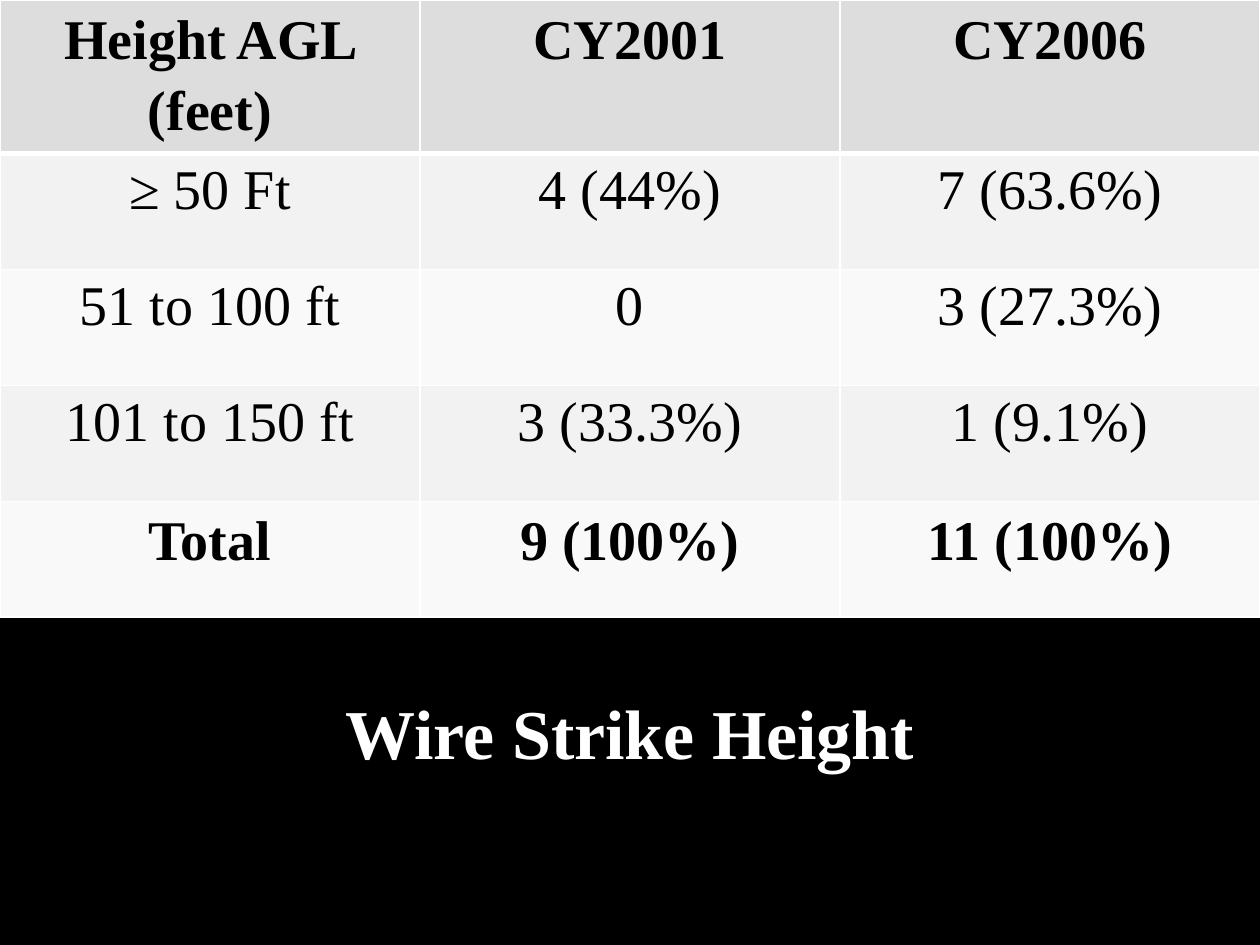
from dataclasses import dataclass

from pptx import Presentation
from pptx.dml.color import RGBColor
from pptx.enum.text import MSO_ANCHOR, PP_ALIGN as Align
from pptx.oxml import parse_xml
from pptx.oxml.ns import nsdecls
from pptx.util import Inches, Pt


@dataclass(frozen=True)
class Theme:
    font: str = "Times New Roman"
    background: str = "000000"
    title: str = "FFFFFF"
    text: str = "000000"
    border: str = "FFFFFF"
    header: str = "DDDDDD"
    bands: tuple = ("F9F9F9", "F2F2F2")
    title_size: int = 40
    table_size: int = 32


theme = Theme()


def write_text(frame, text, size, color, bold=False, line_spacing=1.0):
    frame.word_wrap = True
    paragraph = frame.paragraphs[0]
    paragraph.alignment = Align.CENTER
    paragraph.line_spacing = line_spacing
    run = paragraph.add_run()
    run.text = text
    run.font.name = theme.font
    run.font.size = Pt(size)
    run.font.bold = bold
    run.font.color.rgb = RGBColor.from_string(color)


def add_border(cell, side, width):
    cell._tc.get_or_add_tcPr().append(parse_xml(
        f'<a:ln{side} {nsdecls("a")} w="{Pt(width)}"><a:solidFill>'
        f'<a:srgbClr val="{theme.border}"/></a:solidFill></a:ln{side}>'))


# Slide and background
presentation = Presentation()
presentation.slide_width = Inches(10)
presentation.slide_height = Inches(7.5)
slide = presentation.slides.add_slide(presentation.slide_layouts[5])
slide.background.fill.solid()
slide.background.fill.fore_color.rgb = RGBColor.from_string(theme.background)

# Wire strike table
rows = [
    ("Height AGL (feet)", "CY2001", "CY2006"),
    ("≥ 50 Ft", "4 (44%)", "7 (63.6%)"),
    ("51 to 100 ft", "0", "3 (27.3%)"),
    ("101 to 150 ft", "3 (33.3%)", "1 (9.1%)"),
    ("Total", "9 (100%)", "11 (100%)"),
]
table = slide.shapes.add_table(
    len(rows), len(rows[0]), 0, 0, Inches(10), Inches(4.9)).table

for row_index, values in enumerate(rows):
    is_header = row_index == 0
    is_bold = row_index in (0, len(rows) - 1)
    table.rows[row_index].height = Inches(1.22 if is_header else 0.92)
    fill_color = theme.header if is_header else theme.bands[row_index % 2]
    for column_index, value in enumerate(values):
        cell = table.cell(row_index, column_index)
        if is_bold:
            cell.margin_left = cell.margin_right = Inches(0.07)
            cell.margin_top = cell.margin_bottom = 0
        for side in "LRTB":
            is_rule = (row_index, side) in ((0, "B"), (1, "T"))
            add_border(cell, side, 3 if is_rule else 1)
        cell.fill.solid()
        cell.fill.fore_color.rgb = RGBColor.from_string(fill_color)
        write_text(cell.text_frame, value, theme.table_size, theme.text,
                   bold=is_bold, line_spacing=1.15 if is_bold else 1.0)

# Title below the table
title = slide.shapes.title
title.left, title.top = 0, Inches(5.42)
title.width, title.height = Inches(10), Inches(0.77)
title.text_frame.vertical_anchor = MSO_ANCHOR.TOP
write_text(title.text_frame, "Wire Strike Height", theme.title_size,
           theme.title, bold=True)

presentation.save("out.pptx")
